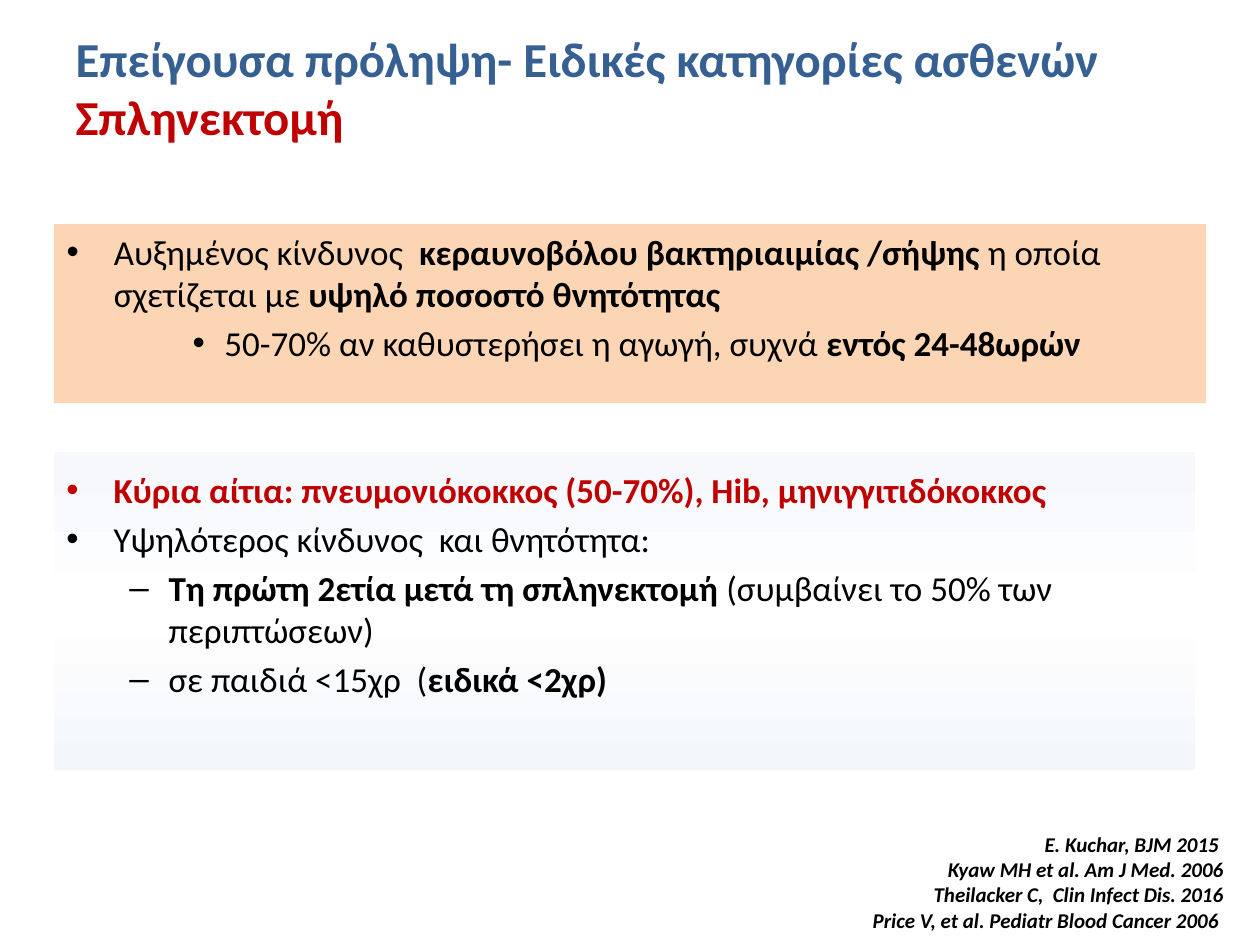
from lxml.etree import SubElement
from pptx import Presentation
from pptx.dml.color import RGBColor
from pptx.enum.shapes import MSO_SHAPE
from pptx.enum.text import MSO_ANCHOR, MSO_AUTO_SIZE, PP_ALIGN
from pptx.oxml.ns import qn
from pptx.util import Cm, Pt

COLORS = {"blue": "376092", "red": "C00000", "black": "000000", "peach": "FCD5B5"}
GRADIENT = [(0, "F6F8FC"), (50, "FFFFFF"), (100, "F3F6FB")]
FONT = "Calibri"

# A run is (text, color, bold)
TITLE_LINES = [
    ("Επείγουσα πρόληψη- Ειδικές κατηγορίες ασθενών", "blue", True),
    ("Σπληνεκτομή", "red", True),
]

# Bullet style: level, text indent and hanging indent in cm, character
BULLETS = {
    "main": (0, 0.95, 0.95, "•"),
    "dash": (1, 2.06, 0.79, "–"),
    "deep": (2, 3.18, 0.64, "•"),
}
RISK = [
    ("main", [
        ("Αυξημένος κίνδυνος  ", "black", False),
        ("κεραυνοβόλου βακτηριαιμίας /σήψης", "black", True),
        (" η οποία σχετίζεται με ", "black", False),
        ("υψηλό ποσοστό θνητότητας", "black", True),
    ]),
    ("deep", [
        ("50-70% αν καθυστερήσει η αγωγή, συχνά ", "black", False),
        ("εντός 24-48ωρών", "black", True),
    ]),
]
CAUSES = [
    ("main", [("Κύρια αίτια: πνευμονιόκοκκος (50-70%), Hib, μηνιγγιτιδόκοκκος", "red", True)]),
    ("main", [("Υψηλότερος κίνδυνος  και θνητότητα:", "black", False)]),
    ("dash", [
        ("Τη πρώτη 2ετία μετά τη σπληνεκτομή", "black", True),
        (" (συμβαίνει το 50% των περιπτώσεων)", "black", False),
    ]),
    ("dash", [
        ("σε παιδιά <15χρ  (", "black", False),
        ("ειδικά <2χρ)", "black", True),
    ]),
]
REFERENCES = [
    "E. Kuchar, BJM 2015 ",
    "Kyaw MH et al. Am J Med. 2006",
    "Theilacker C,  Clin Infect Dis. 2016",
    "Price V, et al. Pediatr Blood Cancer 2006 ",
]


def place(shape, left, top, width, height):
    shape.left, shape.top = Cm(left), Cm(top)
    shape.width, shape.height = Cm(width), Cm(height)


def add_run(paragraph, text, color, bold, size, italic=False):
    run = paragraph.add_run()
    run.text = text
    font = run.font
    font.name, font.size, font.bold, font.italic = FONT, Pt(size), bold, italic
    font.color.rgb = RGBColor.from_string(COLORS[color])


def add_paragraphs(text_frame, count):
    """Return count paragraphs, the first being the one already there."""
    added = [text_frame.add_paragraph() for _ in range(count - 1)]
    return [text_frame.paragraphs[0], *added]


def set_bullet(paragraph, style):
    level, indent, hanging, character = BULLETS[style]
    paragraph.level = level
    properties = paragraph._p.get_or_add_pPr()
    properties.set("marL", str(Cm(indent)))
    properties.set("indent", str(-Cm(hanging)))
    SubElement(properties, qn("a:buFont"), typeface="Arial")
    SubElement(properties, qn("a:buChar"), char=character)


def fill_list(text_frame, items):
    text_frame.word_wrap = True
    text_frame.vertical_anchor = MSO_ANCHOR.TOP
    for paragraph, (style, runs) in zip(add_paragraphs(text_frame, len(items)), items):
        paragraph.alignment = PP_ALIGN.LEFT
        paragraph.space_before = Pt(4)
        set_bullet(paragraph, style)
        for text, color, bold in runs:
            add_run(paragraph, text, color, bold, 20)


def fill_gradient(shape):
    shape.fill.gradient()
    shape.fill.gradient_angle = 270
    stops = shape._element.spPr.find(qn("a:gradFill")).find(qn("a:gsLst"))
    for stop in list(stops):
        stops.remove(stop)
    for position, color in GRADIENT:
        stop = SubElement(stops, qn("a:gs"), pos=str(position * 1000))
        SubElement(stop, qn("a:srgbClr"), val=color)


def add_title(slide):
    title = slide.shapes.title
    place(title, 1.27, 0.76, 22.86, 3.18)
    frame = title.text_frame
    frame.word_wrap = True
    frame.auto_size = MSO_AUTO_SIZE.NONE
    frame.vertical_anchor = MSO_ANCHOR.MIDDLE
    frame.margin_top, frame.margin_bottom = Cm(0), Cm(1.19)
    paragraph = frame.paragraphs[0]
    paragraph.alignment = PP_ALIGN.LEFT
    for number, (text, color, bold) in enumerate(TITLE_LINES):
        if number:
            paragraph.add_line_break()
        add_run(paragraph, text, color, bold, 27.9)


def add_risk_panel(slide):
    panel = slide.placeholders[1]
    place(panel, 1.09, 4.52, 23.22, 3.61)
    panel.fill.solid()
    panel.fill.fore_color.rgb = RGBColor.from_string(COLORS["peach"])
    panel.text_frame.auto_size = MSO_AUTO_SIZE.NONE
    fill_list(panel.text_frame, RISK)


def add_causes_panel(slide):
    panel = slide.shapes.add_shape(
        MSO_SHAPE.RECTANGLE, Cm(1.09), Cm(9.12), Cm(23.01), Cm(6.4))
    panel.shadow.inherit = False
    panel.line.fill.background()
    fill_gradient(panel)
    panel.text_frame.margin_top = Cm(0.33)
    fill_list(panel.text_frame, CAUSES)


def add_references(slide):
    box = slide.shapes.add_textbox(Cm(14.71), Cm(16.64), Cm(10.21), Cm(2.29))
    frame = box.text_frame
    frame.word_wrap = True
    for paragraph, text in zip(add_paragraphs(frame, len(REFERENCES)), REFERENCES):
        paragraph.alignment = PP_ALIGN.RIGHT
        add_run(paragraph, text, "black", True, 12, italic=True)


def main():
    presentation = Presentation()
    presentation.slide_width, presentation.slide_height = Cm(25.4), Cm(19.05)
    slide = presentation.slides.add_slide(presentation.slide_layouts[1])
    add_title(slide)
    add_risk_panel(slide)
    add_causes_panel(slide)
    add_references(slide)
    presentation.save("out.pptx")


if __name__ == "__main__":
    main()
